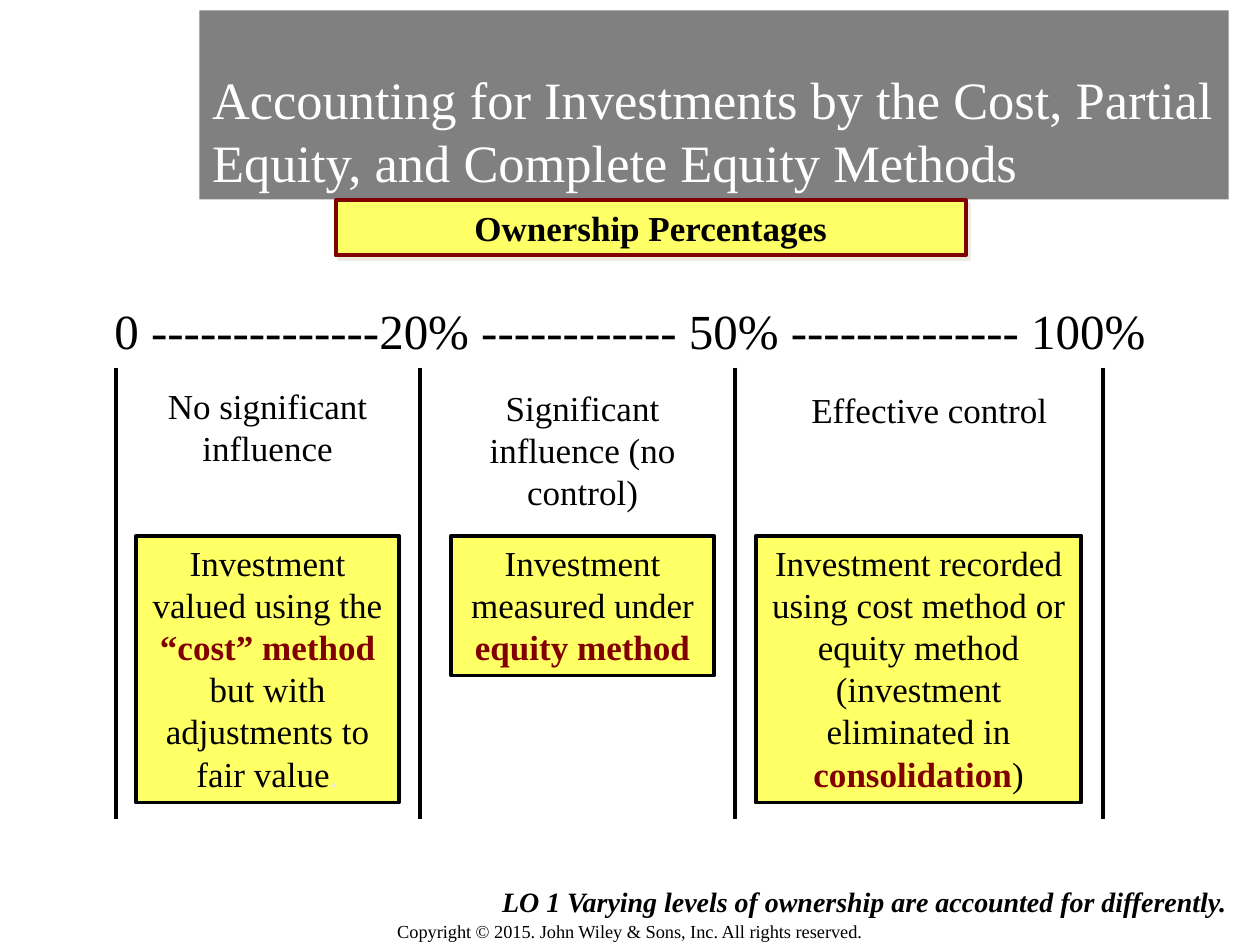
import pptx
import pptx.util
import pptx.dml.color
import pptx.enum.shapes
import pptx.enum.text
from lxml import etree

Cm, Pt = pptx.util.Cm, pptx.util.Pt
RGBColor = pptx.dml.color.RGBColor
ALIGN = pptx.enum.text.PP_ALIGN
ANCHOR = pptx.enum.text.MSO_ANCHOR
A_NS = "http://schemas.openxmlformats.org/drawingml/2006/main"

BLACK = RGBColor(0, 0, 0)
WHITE = RGBColor(255, 255, 255)
GRAY = RGBColor(0x80, 0x80, 0x80)
YELLOW = RGBColor(0xFF, 0xFF, 0x66)
MAROON = RGBColor(0x80, 0, 0)
CREAM = RGBColor(0xEE, 0xEC, 0xE1)
KEY = {"bold": True, "color": MAROON}


def write(s, runs, align=ALIGN.CENTER, anchor=ANCHOR.TOP, **base):
    """Fill a shape with one paragraph of (text, format) runs."""
    tf = s.text_frame
    tf.word_wrap = True
    tf.auto_size = pptx.enum.text.MSO_AUTO_SIZE.NONE
    tf.vertical_anchor = anchor
    p = tf.paragraphs[0]
    p.alignment = align
    for text, own in runs:
        r = p.add_run()
        r.text = text
        fmt = {"name": "Times New Roman", "size": Pt(20), "bold": False,
               "color": BLACK} | base | own
        r.font.color.rgb = fmt.pop("color")
        for key, value in fmt.items():
            setattr(r.font, key, value)


def add_box(left, top, width, height, fill, line=None):
    s = slide.shapes.add_shape(pptx.enum.shapes.MSO_SHAPE.RECTANGLE,
                               Cm(left), Cm(top), Cm(width), Cm(height))
    s.shadow.inherit = False
    s.fill.solid()
    s.fill.fore_color.rgb = fill
    if line is None:
        s.line.fill.background()
    else:
        s.line.color.rgb = line
        s.line.width = Pt(2.25)
    return s


prs = pptx.Presentation()
prs.slide_width, prs.slide_height = Cm(25.4), Cm(19.05)
slide = prs.slides.add_slide(prs.slide_layouts[5])

# Title
s = slide.shapes.title
s.left, s.top, s.width, s.height = Cm(4.02), Cm(0.21), Cm(20.75), Cm(3.81)
s.fill.solid()
s.fill.fore_color.rgb = GRAY
write(s, [("Accounting for Investments by the Cost, Partial Equity, "
           "and Complete Equity Methods", {})],
      ALIGN.LEFT, ANCHOR.BOTTOM, size=Pt(30), color=WHITE)

# Plain text: copyright, ownership scale and levels of influence
for left, top, width, height, size, text in [
    (0, 18.42, 25.4, 0.73, 10.5,
     "Copyright © 2015. John Wiley & Sons, Inc. All rights reserved."),
    (0.85, 5.94, 23.7, 1.4, 28,
     "0 --------------20% ------------ 50% -------------- 100%"),
    (2.75, 7.62, 5.29, 1.96, 20, "No significant influence"),
    (9.1, 7.67, 5.29, 2.8, 20, "Significant influence (no control)"),
    (16.09, 7.7, 5.29, 1.11, 20, "Effective control"),
]:
    s = slide.shapes.add_textbox(Cm(left), Cm(top), Cm(width), Cm(height))
    write(s, [(text, {})], size=Pt(size))

# Dividers under the scale
for x in (2.33, 8.47, 14.82, 22.23):
    s = slide.shapes.add_connector(pptx.enum.shapes.MSO_CONNECTOR.STRAIGHT,
                                   Cm(x), Cm(7.41), Cm(x), Cm(16.51))
    s.line.color.rgb = BLACK
    s.line.width = Pt(2.25)
    etree.SubElement(s.element.spPr, f"{{{A_NS}}}effectLst")

# Accounting method for each level
for left, width, height, runs in [
    (2.75, 5.29, 5.38, [("Investment valued using the ", {}),
                        ("“cost” method ", KEY),
                        ("but with adjustments to fair value", {}),
                        (".", {"color": CREAM})]),
    (9.1, 5.29, 2.82, [("Investment measured under ", {}),
                       ("equity method", KEY)]),
    (15.24, 6.56, 5.38, [("Investment recorded using cost method or equity "
                          "method (investment eliminated in ", {}),
                         ("consolidation", KEY), (")", {})]),
]:
    write(add_box(left, 10.8, width, height, YELLOW, BLACK), runs)

# Heading of the scale, with a soft offset shadow
s = add_box(6.77, 4.04, 12.7, 1.11, YELLOW, MAROON)
write(s, [("Ownership Percentages", {})], bold=True)
effects = s.element.spPr.find(f"{{{A_NS}}}effectLst")
shadow = etree.SubElement(effects, f"{{{A_NS}}}outerShdw", dist=str(Pt(2.8)),
                          dir="2700000", algn="ctr", rotWithShape="0")
etree.SubElement(shadow, f"{{{A_NS}}}srgbClr", val=str(CREAM))

# Learning objective
write(add_box(4.66, 17.7, 20.32, 0.94, WHITE),
      [("LO 1 Varying levels of ownership are accounted for differently.", {})],
      ALIGN.RIGHT, size=Pt(16), bold=True, italic=True)

prs.save("out.pptx")
